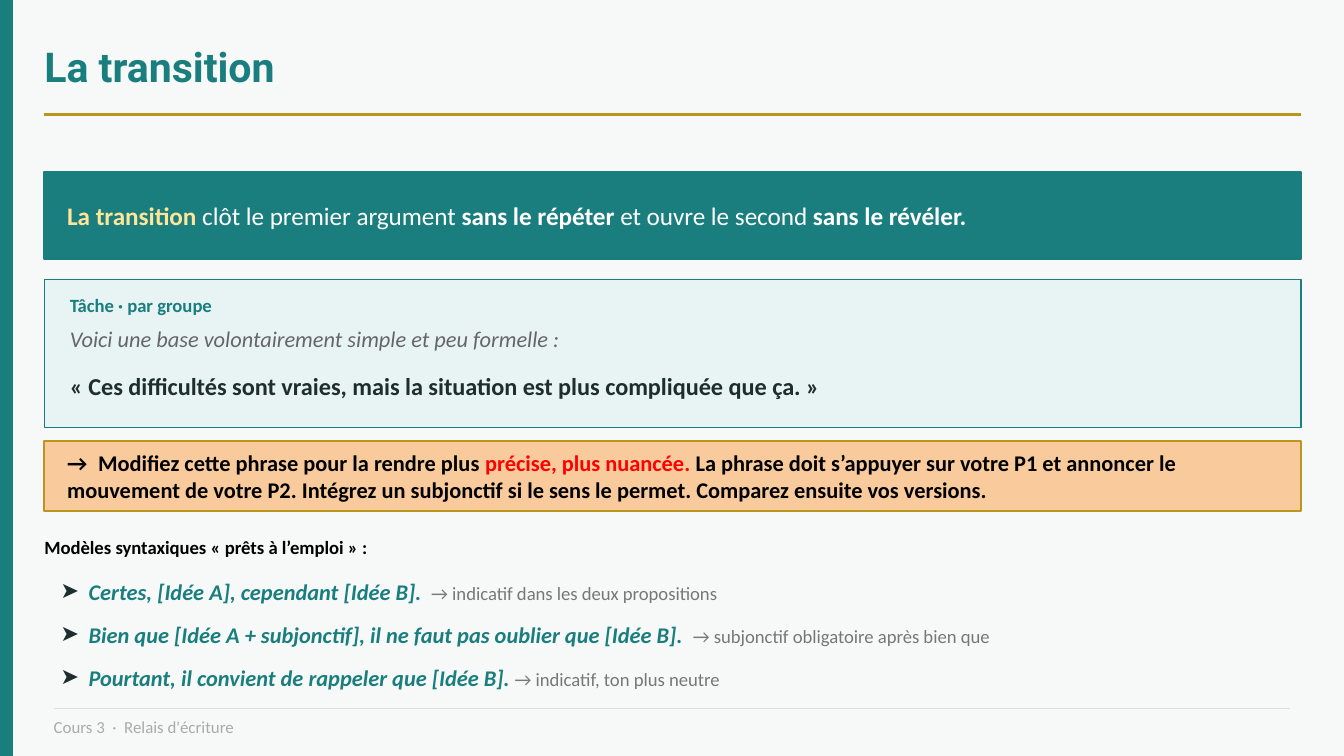
from lxml.etree import SubElement as Sub
from pptx import Presentation
from pptx.dml.color import RGBColor as Color
from pptx.enum.shapes import MSO_CONNECTOR as Link, MSO_SHAPE as Shape
from pptx.enum.text import MSO_ANCHOR as Anchor
from pptx.oxml.ns import qn
from pptx.util import Inches, Pt

TEAL = Color(0x1A, 0x7E, 0x7E)
GOLD = Color(0xB8, 0x96, 0x20)
CREAM = Color(0xFF, 0xE5, 0x99)
PALE = Color(0xE8, 0xF4, 0xF4)
PEACH = Color(0xF9, 0xCB, 0x9C)
PAPER = Color(0xF7, 0xF9, 0xF9)
WHITE = Color(0xFF, 0xFF, 0xFF)
BLACK = Color(0, 0, 0)
RED = Color(0xFF, 0, 0)
INK = Color(0x1E, 0x2D, 0x2D)
SLATE = Color(0x66, 0x66, 0x66)
GREY = Color(0x77, 0x77, 0x77)
MIST = Color(0xAA, 0xAA, 0xAA)
RULE = Color(0xDD, 0xDD, 0xDD)

WIDE = 10
HIGH = WIDE * 9 / 16
LEFT, WIDTH = 0.33, 9.35
MODELS = [
    ("Certes, [Idée A], cependant [Idée B]. ",
     " → indicatif dans les deux propositions"),
    ("Bien que [Idée A + subjonctif], il ne faut pas oublier que [Idée B]. ",
     " → subjonctif obligatoire après bien que"),
    ("Pourtant, il convient de rappeler que [Idée B].",
     " → indicatif, ton plus neutre"),
]


def add_box(slide, x, y, w, h, fill, edge=TEAL, weight=1):
    box = slide.shapes.add_shape(
        Shape.RECTANGLE, Inches(x), Inches(y), Inches(w), Inches(h))
    box.shadow.inherit = False
    box.fill.solid()
    box.fill.fore_color.rgb = fill
    box.line.color.rgb = edge
    box.line.width = Pt(weight)


def add_rule(slide, x, y, w, color, weight):
    rule = slide.shapes.add_connector(
        Link.STRAIGHT, Inches(x), Inches(y), Inches(x + w), Inches(y))
    rule.line.color.rgb = color
    rule.line.width = Pt(weight)
    Sub(rule._element.spPr, qn("a:effectLst"))


def add_para(slide, x, y, w, h):
    box = slide.shapes.add_textbox(Inches(x), Inches(y), Inches(w), Inches(h))
    frame = box.text_frame
    frame.word_wrap = True
    frame.vertical_anchor = Anchor.MIDDLE
    frame.margin_left = frame.margin_right = 0
    frame.margin_top = frame.margin_bottom = 0
    return frame.paragraphs[0]


def set_font(para, size, color, bold=False, italic=False, name="Calibri"):
    font = para.font
    font.name, font.size = name, Pt(size)
    font.bold, font.italic = bold, italic
    font.color.rgb = color


def add_run(para, text, color=None, bold=None):
    run = para.add_run()
    run.text = text
    if color is not None:
        run.font.color.rgb = color
    if bold is not None:
        run.font.bold = bold
    return run


def add_text(slide, x, y, w, h, text, size, color, **style):
    para = add_para(slide, x, y, w, h)
    set_font(para, size, color, **style)
    add_run(para, text)


def set_tab(para, pos):
    tabs = Sub(para._p.get_or_add_pPr(), qn("a:tabLst"))
    Sub(tabs, qn("a:tab"), pos=str(Inches(pos)), algn="l")


def set_bullet(para, char, color, indent):
    props = para._p.get_or_add_pPr()
    props.set("marL", str(Inches(indent)))
    props.set("indent", str(-Inches(indent)))
    Sub(Sub(props, qn("a:buClr")), qn("a:srgbClr"), val=str(color))
    Sub(props, qn("a:buFont"), typeface="Calibri")
    Sub(props, qn("a:buChar"), char=char)


def add_model(slide, y, model, note):
    para = add_para(slide, 0.45, y, 9, 0.28)
    set_bullet(para, "➤", INK, 0.21)
    set_font(para, 12, TEAL, bold=True, italic=True)
    add_run(para, model)
    tail = add_run(para, note, GREY, False)
    tail.font.size = Pt(10)
    tail.font.italic = False


def add_head(slide):
    add_box(slide, 0, 0, 0.09, HIGH, TEAL)
    add_text(slide, LEFT, 0.22, WIDTH, 0.55, "La transition", 22, TEAL,
             bold=True, name="Roboto")
    add_rule(slide, LEFT, 0.85, WIDTH, GOLD, 1.5)


def add_key(slide):
    add_box(slide, LEFT, 1.28, WIDTH, 0.65, TEAL)
    para = add_para(slide, 0.5, 1.28, 9.1, 0.65)
    set_font(para, 13.5, WHITE)
    add_run(para, "La transition ", CREAM, True)
    add_run(para, "clôt le premier argument ")
    add_run(para, "sans le répéter ", bold=True)
    add_run(para, "et ouvre le second ")
    add_run(para, "sans le révéler.", bold=True)


def add_task(slide):
    add_box(slide, LEFT, 2.08, WIDTH, 1.1, PALE, weight=0.8)
    add_text(slide, 0.52, 2.13, 1.2, 0.28, "Tâche · par groupe", 10, TEAL,
             bold=True)
    add_text(slide, 0.52, 2.4, 8.9, 0.24,
             "Voici une base volontairement simple et peu formelle :",
             12, SLATE, italic=True)
    add_text(slide, 0.52, 2.64, 8.9, 0.46,
             "« Ces difficultés sont vraies, mais la situation est plus "
             "compliquée que ça. »", 13, INK, bold=True)


def add_order(slide):
    add_box(slide, LEFT, 3.28, WIDTH, 0.52, PEACH, GOLD)
    para = add_para(slide, 0.5, 3.28, 9.1, 0.52)
    set_tab(para, 0.23)
    set_font(para, 12, BLACK, bold=True)
    add_run(para, "→\tModifiez cette phrase pour la rendre plus ")
    add_run(para, "précise, plus nuancée. ", RED)
    add_run(para, "La phrase doit s’appuyer sur votre P1 et annoncer le "
            "mouvement de votre P2. Intégrez un subjonctif si le sens le "
            "permet. Comparez ensuite vos versions.")


def main():
    deck = Presentation()
    deck.slide_width, deck.slide_height = Inches(WIDE), Inches(HIGH)
    slide = deck.slides.add_slide(deck.slide_layouts[6])
    slide.background.fill.solid()
    slide.background.fill.fore_color.rgb = PAPER

    add_head(slide)
    add_key(slide)
    add_task(slide)
    add_order(slide)
    add_text(slide, LEFT, 3.92, WIDTH, 0.3,
             "Modèles syntaxiques « prêts à l’emploi » :", 10, BLACK, bold=True)
    for row, (model, note) in enumerate(MODELS):
        add_model(slide, 4.26 + 0.32 * row, model, note)
    add_rule(slide, 0.4, 5.27, 9.2, RULE, 0.75)
    add_text(slide, 0.4, 5.3, 9.2, 0.22, "Cours 3  ·  Relais d'écriture",
             9, MIST)
    deck.save("out.pptx")


if __name__ == "__main__":
    main()
